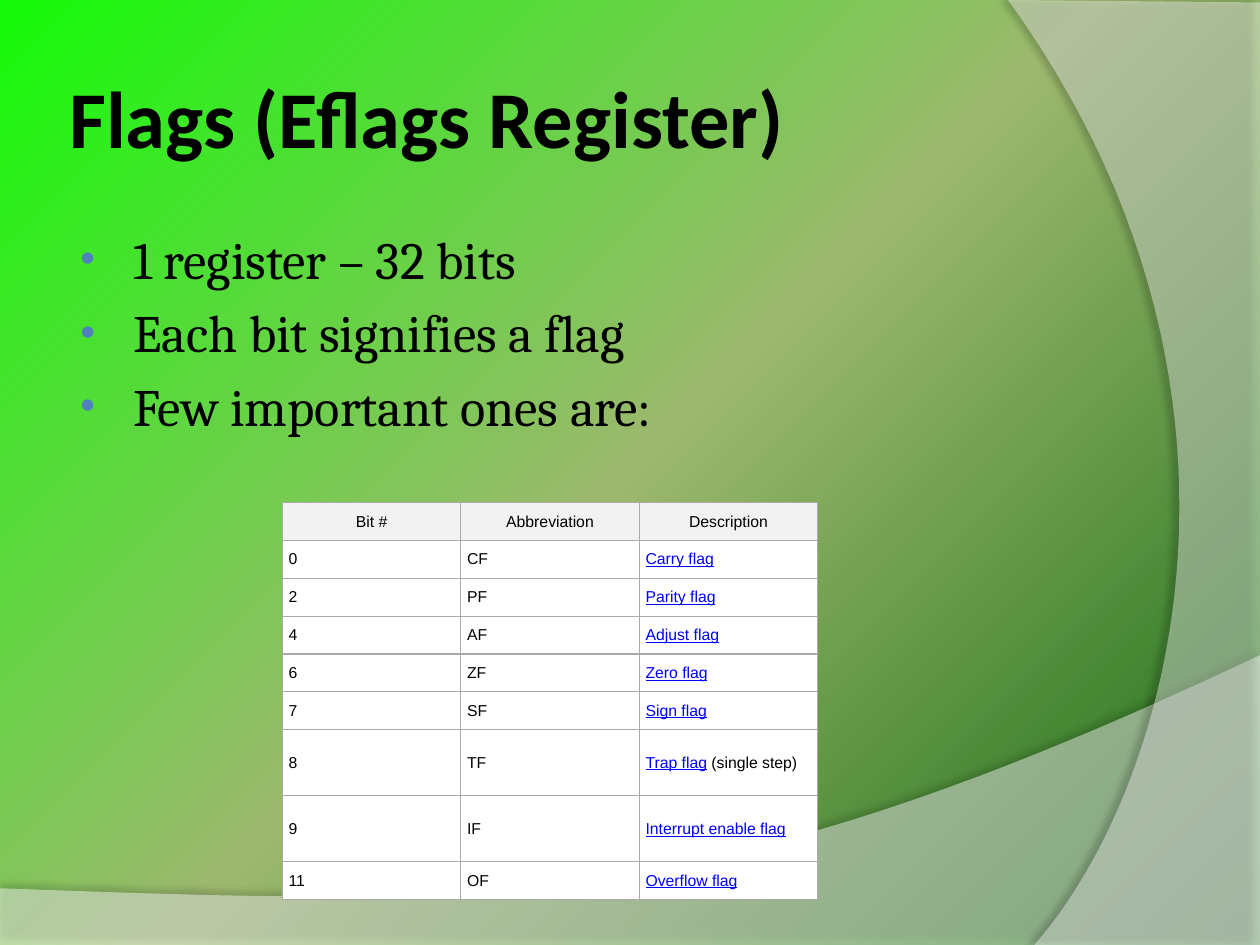
from copy import deepcopy
from dataclasses import dataclass

from pptx import Presentation, util as u
from pptx.dml.color import RGBColor
from pptx.enum import text
from pptx.oxml import parse_xml
from pptx.oxml.ns import nsdecls, qn


@dataclass(frozen=True)
class Theme:
    back: tuple = ((0, "15FB09"), (0.5, "9CB86E"), (1, "156B13"))
    ink: str = "000000"
    white: str = "FFFFFF"
    head: str = "F2F2F2"
    link: str = "0000FF"
    dot: str = "4F81BD"
    edge: str = "AAAAAA"
    title: tuple = ("Calibri", 46, True)
    body: tuple = ("Cambria", 30, False)
    cell: tuple = ("Arial", 9, False)


COLS, ROWS = 20, 15
FRAME = {"word_wrap": True, "auto_size": text.MSO_AUTO_SIZE.NONE}
MIDDLE = text.MSO_ANCHOR.MIDDLE
CELL = {"vertical_anchor": MIDDLE,
        "margin_left": u.Inches(0.05), "margin_right": u.Inches(0.05),
        "margin_top": u.Inches(0.03), "margin_bottom": u.Inches(0.03)}


def apply(obj, form):
    for key, val in form.items():
        setattr(obj, key, val)


def curve(a, b, c, d, steps=48):
    """Points after a on the cubic Bezier from a to d."""
    for i in range(1, steps + 1):
        t = i / steps
        s = 1 - t
        yield tuple(s**3 * p + 3 * s * s * t * q + 3 * s * t * t * r + t**3 * e
                    for p, q, r, e in zip(a, b, c, d))


class Deck:
    def __init__(self, theme):
        self.theme = theme
        self.prs = Presentation()
        apply(self.prs, {"slide_width": u.Inches(10), "slide_height": u.Inches(7.5)})
        self.slide = self.prs.slides.add_slide(self.prs.slide_layouts[6])

    def x(self, cols):
        return round(self.prs.slide_width * cols / COLS)

    def y(self, rows):
        return round(self.prs.slide_height * rows / ROWS)

    def box(self, area):
        left, top, wide, high = area
        return self.x(left), self.y(top), self.x(wide), self.y(high)

    def back(self):
        fill = self.slide.background.fill
        fill.gradient()
        fill.gradient_angle = 315
        stops = self.slide.background._cSld.find(".//" + qn("a:gsLst"))
        stops.append(deepcopy(stops[0]))
        for stop, (pos, tone) in zip(fill.gradient_stops, self.theme.back):
            stop.position = pos
            stop.color.rgb = RGBColor.from_string(tone)

    def wave(self, points, alpha, shade, dist, turn):
        """Translucent white outline with a soft shadow; turn is in degrees."""
        first, *rest = [(self.x(a), self.y(b)) for a, b in points]
        build = self.slide.shapes.build_freeform(*first, scale=1.0)
        build.add_line_segments(rest, close=True)
        shape = build.convert_to_shape()
        shape.fill.solid()
        shape.fill.fore_color.rgb = RGBColor.from_string(self.theme.white)
        shape.line.fill.background()
        tone = shape._element.spPr.find(".//" + qn("a:srgbClr"))
        tone.append(parse_xml(f'<a:alpha {nsdecls("a")} val="{alpha * 1000}"/>'))
        shape._element.spPr.append(parse_xml(
            f'<a:effectLst {nsdecls("a")}><a:outerShdw blurRad="{u.Pt(4)}" '
            f'dist="{u.Pt(dist)}" dir="{turn * 60000}" algn="ctr" rotWithShape="0">'
            f'<a:srgbClr val="{self.theme.ink}"><a:alpha val="{shade * 1000}"/>'
            '</a:srgbClr></a:outerShdw></a:effectLst>'))

    def run(self, para, words, style, link=False):
        name, size, bold = style
        run = para.add_run()
        run.text = words
        apply(run.font, {"name": name, "size": u.Pt(size), "bold": bold,
                         "underline": link})
        tone = self.theme.link if link else self.theme.ink
        run.font.color.rgb = RGBColor.from_string(tone)

    def frame(self, area, form):
        frame = self.slide.shapes.add_textbox(*self.box(area)).text_frame
        apply(frame, FRAME | form)
        return frame

    def title(self, words, area):
        pad = u.Inches(0.05)
        frame = self.frame(area, {"vertical_anchor": MIDDLE,
                                  "margin_left": pad, "margin_right": pad})
        self.run(frame.paragraphs[0], words, self.theme.title)

    def list(self, lines, area):
        frame = self.frame(area, {})
        for i, line in enumerate(lines):
            para = frame.add_paragraph() if i else frame.paragraphs[0]
            para.space_before = u.Pt(6)
            props = para._p.get_or_add_pPr()
            props.set("marL", str(u.Inches(0.46)))
            props.set("indent", str(u.Inches(-0.42)))
            for xml in (f'buClr {nsdecls("a")}><a:srgbClr val="{self.theme.dot}"/></a:buClr>',
                        f'buSzPct {nsdecls("a")} val="80000"/>',
                        f'buFont {nsdecls("a")} typeface="Arial"/>',
                        f'buChar {nsdecls("a")} char="•"/>'):
                props.append(parse_xml("<a:" + xml))
            self.run(para, line, self.theme.body)

    def edges(self, cell):
        props = cell._tc.get_or_add_tcPr()
        for side in "LRTB":
            props.append(parse_xml(
                f'<a:ln{side} {nsdecls("a")} w="{u.Pt(0.75)}"><a:solidFill>'
                f'<a:srgbClr val="{self.theme.edge}"/></a:solidFill></a:ln{side}>'))

    def table(self, head, rows, area, highs):
        """Last column of each row is a link label, with plain words after a bar."""
        grid = self.slide.shapes.add_table(len(rows) + 1, len(head), *self.box(area)).table
        apply(grid, {"first_row": False, "horz_banding": False})
        for row, high in zip(grid.rows, highs):
            row.height = self.y(high)
        for i, line in enumerate([head, *rows]):
            for j, words in enumerate(line):
                cell = grid.cell(i, j)
                apply(cell, CELL)
                self.edges(cell)
                cell.fill.solid()
                tone = self.theme.white if i else self.theme.head
                cell.fill.fore_color.rgb = RGBColor.from_string(tone)
                para = cell.text_frame.paragraphs[0]
                para.alignment = text.PP_ALIGN.LEFT if i else text.PP_ALIGN.CENTER
                for k, part in enumerate(words.split("|")):
                    link = i > 0 and j == len(head) - 1 and k == 0
                    self.run(para, part, self.theme.cell, link)


def main():
    deck = Deck(Theme())
    deck.back()
    deck.wave([(0, 14.1), (0, 15), (20, 15), (20, 10.4),
               *curve((20, 10.4), (11.18, 14.58), (7.82, 14.38), (0, 14.1))],
              alpha=45, shade=35, dist=3.5, turn=270)
    deck.wave([(20, 0.04), (20, 15), (16.42, 15),
               *curve((16.42, 15), (18.7, 12.38), (20.36, 6), (16, 0))],
              alpha=40, shade=45, dist=4, turn=180)
    deck.title("Flags (Eflags Register)", (1, 0.6, 16.34, 2.5))
    deck.list(["1 register – 32 bits", "Each bit signifies a flag",
               "Few important ones are:"], (1, 3.5, 16.34, 9.9))
    flags = [("0", "CF", "Carry flag"), ("2", "PF", "Parity flag"),
             ("4", "AF", "Adjust flag"), ("6", "ZF", "Zero flag"),
             ("7", "SF", "Sign flag"), ("8", "TF", "Trap flag| (single step)"),
             ("9", "IF", "Interrupt enable flag"), ("11", "OF", "Overflow flag")]
    deck.table(("Bit #", "Abbreviation", "Description"), flags,
               (4.48, 7.98, 8.5, 6.32), [0.6] * 6 + [1.05] * 2 + [0.6])
    deck.prs.save("out.pptx")


if __name__ == "__main__":
    main()
